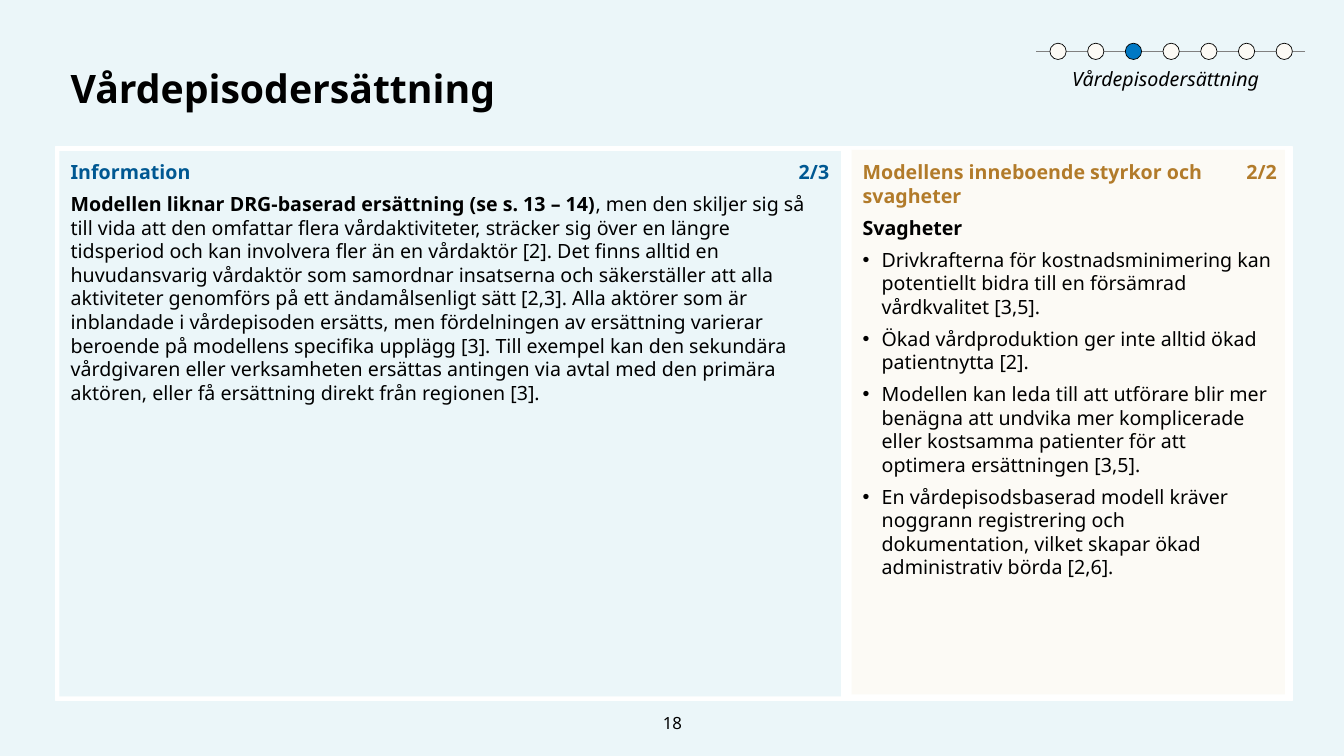
from dataclasses import dataclass

from lxml.etree import SubElement
from pptx import Presentation
from pptx.dml.color import RGBColor
from pptx.enum.shapes import MSO_CONNECTOR, MSO_SHAPE
from pptx.enum.text import MSO_ANCHOR, PP_ALIGN
from pptx.oxml.ns import qn
from pptx.util import Cm, Pt


@dataclass(frozen=True)
class Theme:
    font: str = "Noto Sans"
    title_size: int = 28
    body_size: int = 14
    number_size: int = 12
    black: RGBColor = RGBColor(0x00, 0x00, 0x00)
    white: RGBColor = RGBColor(0xFF, 0xFF, 0xFF)
    ice: RGBColor = RGBColor(0xEB, 0xF6, 0xF9)
    cream: RGBColor = RGBColor(0xFC, 0xFA, 0xF5)
    navy: RGBColor = RGBColor(0x00, 0x58, 0x92)
    ochre: RGBColor = RGBColor(0xB2, 0x7B, 0x2A)
    blue: RGBColor = RGBColor(0x00, 0x78, 0xC4)
    grey: RGBColor = RGBColor(0x80, 0x80, 0x80)


theme = Theme()
prs = Presentation()
prs.slide_width, prs.slide_height = Cm(33.87), Cm(19.05)
slide = prs.slides.add_slide(prs.slide_layouts[6])
slide.background.fill.solid()
slide.background.fill.fore_color.rgb = theme.ice


def add_frame(left, top, width, height, insets=(0, 0, 0.25, 0.13), anchor=MSO_ANCHOR.TOP):
    frame = slide.shapes.add_textbox(Cm(left), Cm(top), Cm(width), Cm(height)).text_frame
    frame.word_wrap = True
    frame.vertical_anchor = anchor
    frame.margin_left, frame.margin_top, frame.margin_right, frame.margin_bottom = map(Cm, insets)
    return frame


def write(frame, text, size=theme.body_size, color=theme.black, bold=False, italic=False,
          align=PP_ALIGN.LEFT, spacing=1.0, after=0, bullet=False, same_line=False):
    paragraph = frame.paragraphs[-1]
    if paragraph.runs and not same_line:
        paragraph = frame.add_paragraph()
    if not same_line:
        paragraph.alignment = align
        paragraph.line_spacing = spacing
        paragraph.space_after = Pt(after)
    if bullet:
        properties = paragraph._p.get_or_add_pPr()
        properties.set("marL", str(Cm(0.48)))
        properties.set("indent", str(-Cm(0.48)))
        SubElement(properties, qn("a:buFont")).set("typeface", "Arial")
        SubElement(properties, qn("a:buChar")).set("char", "•")
    run = paragraph.add_run()
    run.text = text
    run.font.name = theme.font
    run.font.size = Pt(size)
    run.font.color.rgb = color
    run.font.bold = bold
    run.font.italic = italic


# White frame with the two panels
for left, top, width, height, fill in (
    (1.4, 3.71, 31.17, 13.94, theme.white),
    (1.5, 3.81, 19.69, 13.74, theme.ice),
    (21.46, 3.78, 10.92, 13.72, theme.cream),
):
    panel = slide.shapes.add_shape(MSO_SHAPE.RECTANGLE, Cm(left), Cm(top), Cm(width), Cm(height))
    panel.shadow.inherit = False
    panel.fill.solid()
    panel.fill.fore_color.rgb = fill
    if fill == theme.white:
        panel.line.color.rgb = theme.white
        panel.line.width = Pt(1)
    else:
        panel.line.fill.background()

# Title and page number
title = add_frame(1.78, 1.5, 30.33, 2.03)
write(title, "Vårdepisodersättning", size=theme.title_size, bold=True, spacing=1.1)
page_number = add_frame(15.65, 17.7, 2.59, 1.02, (0.25, 0.13, 0.25, 0.13), MSO_ANCHOR.MIDDLE)
write(page_number, "18", size=theme.number_size, align=PP_ALIGN.CENTER)

# Strengths and weaknesses
weaknesses = add_frame(21.74, 4.04, 10.64, 13.49)
write(weaknesses, "Modellens inneboende styrkor och svagheter", color=theme.ochre, bold=True, after=6)
write(weaknesses, "Svagheter", bold=True, after=6)
for weakness in (
    "Drivkrafterna för kostnadsminimering kan potentiellt bidra till en försämrad vårdkvalitet [3,5].",
    "Ökad vårdproduktion ger inte alltid ökad patientnytta [2].",
    "Modellen kan leda till att utförare blir mer benägna att undvika mer komplicerade "
    "eller kostsamma patienter för att optimera ersättningen [3,5].",
    "En vårdepisodsbaserad modell kräver noggrann registrering och dokumentation, "
    "vilket skapar ökad administrativ börda [2,6].",
):
    write(weaknesses, weakness, after=6, bullet=True)

# Information
information = add_frame(1.78, 4.04, 19.13, 12.4)
write(information, "Information", color=theme.navy, bold=True, after=6)
write(information, "Modellen liknar DRG-baserad ersättning (se s. 13 – 14)", bold=True, after=6)
write(
    information,
    ", men den skiljer sig så till vida att den omfattar flera vårdaktiviteter, sträcker sig "
    "över en längre tidsperiod och kan involvera fler än en vårdaktör [2]. Det finns alltid en "
    "huvudansvarig vårdaktör som samordnar insatserna och säkerställer att alla aktiviteter "
    "genomförs på ett ändamålsenligt sätt [2,3]. Alla aktörer som är inblandade i vårdepisoden "
    "ersätts, men fördelningen av ersättning varierar beroende på modellens specifika upplägg "
    "[3]. Till exempel kan den sekundära vårdgivaren eller verksamheten ersättas antingen via "
    "avtal med den primära aktören, eller få ersättning direkt från regionen [3].",
    same_line=True,
)

# Part counters
for left, count, color in ((18.44, "2/3", theme.navy), (29.72, "2/2", theme.ochre)):
    counter = add_frame(left, 4.04, 2.46, 0.58, (0, 0.13, 0, 0), MSO_ANCHOR.BOTTOM)
    write(counter, count, color=color, bold=True, align=PP_ALIGN.RIGHT)

# Progress tracker: third of seven steps is current
tracker_caption = add_frame(26.37, 1.55, 6.27, 0.41, (0, 0.13, 0.25, 0.13))
write(tracker_caption, "Vårdepisodersättning", italic=True, align=PP_ALIGN.CENTER)
track = slide.shapes.add_connector(MSO_CONNECTOR.STRAIGHT, Cm(32.89), Cm(1.3), Cm(26.11), Cm(1.3))
track.line.color.rgb = theme.grey
track.line.width = Pt(1)
SubElement(track._element.spPr, qn("a:effectLst"))
for step in range(7):
    dot = slide.shapes.add_shape(
        MSO_SHAPE.OVAL, Cm(26.46 + step * 0.95), Cm(1.09), Cm(0.41), Cm(0.41))
    dot.shadow.inherit = False
    dot.fill.solid()
    dot.fill.fore_color.rgb = theme.blue if step == 2 else theme.cream
    dot.line.color.rgb = theme.black
    dot.line.width = Pt(0.5)

prs.save("out.pptx")
